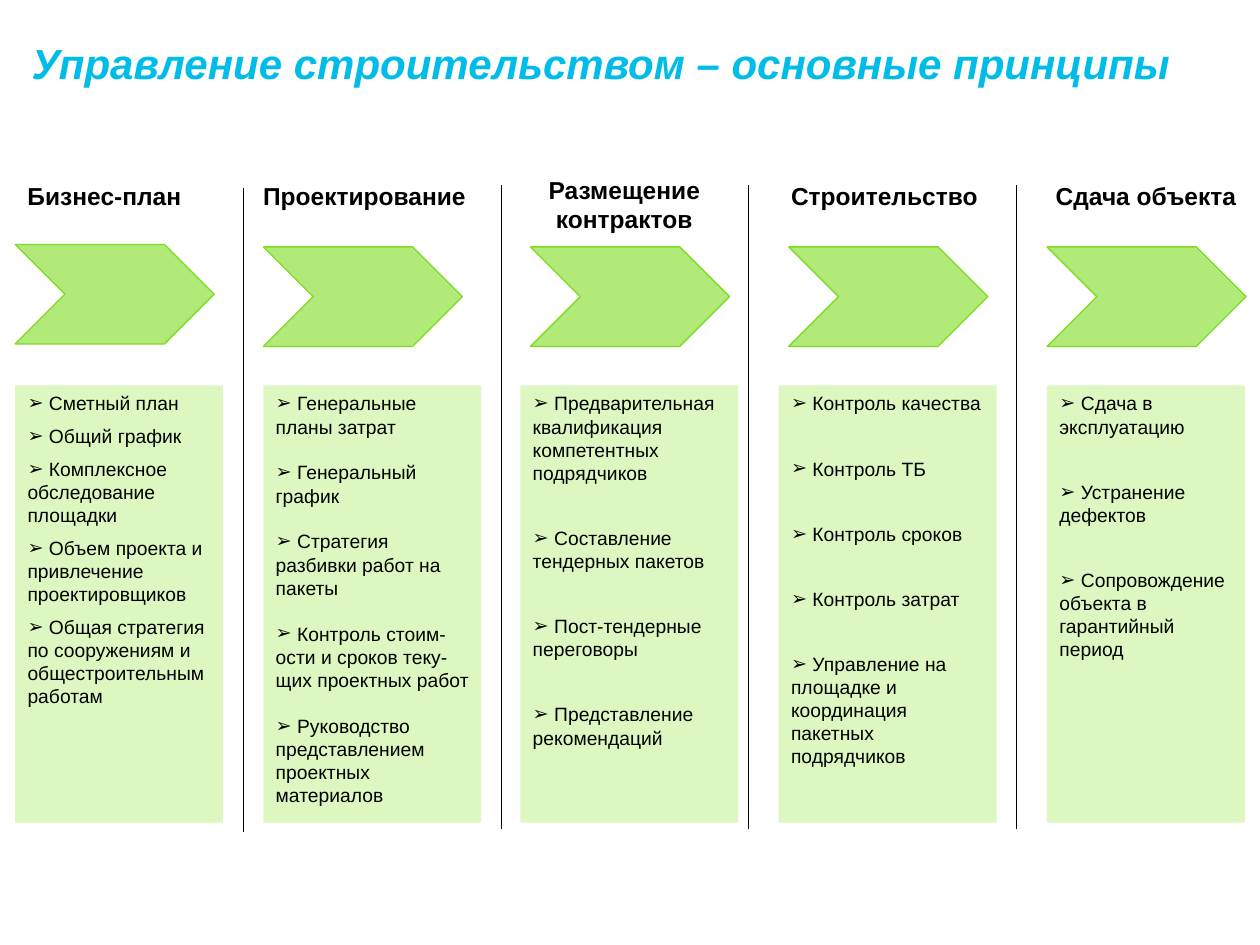
from lxml.etree import SubElement
from pptx import Presentation
from pptx.dml.color import RGBColor as Rgb
from pptx.enum.shapes import MSO_CONNECTOR as Link, MSO_SHAPE as Kind
from pptx.enum.text import MSO_ANCHOR as Anchor, PP_ALIGN as Align
from pptx.oxml.ns import qn
from pptx.util import Inches, Pt

HUES = {"title": "00BCE9", "ink": "000000", "arrow": "7DDC1E", "card": "CEF5A5"}

deck = Presentation()
deck.slide_width, deck.slide_height = Inches(10), Inches(7.5)
col, row = deck.slide_width / 100, deck.slide_height / 100
slide = deck.slides.add_slide(deck.slide_layouts[5])


def place(x, y, w, h):
    return int(x * col), int(y * row), int(w * col), int(h * row)


def paint(shape, hue, alpha):
    shape.shadow.inherit = False
    shape.fill.solid()
    shape.fill.fore_color.rgb = Rgb.from_string(HUES[hue])
    tint = shape._element.spPr.find(qn("a:solidFill"))[0]
    SubElement(tint, qn("a:alpha"), val=str(alpha * 1000))


title = slide.shapes.title
title.left, title.top, title.width, title.height = place(0, 4.8, 95.8, 11.07)
frame = title.text_frame
frame.text = "Управление строительством – основные принципы"
frame.word_wrap = True
frame.vertical_anchor = Anchor.TOP
frame.margin_left = Inches(0.25)
frame.margin_right = frame.margin_top = frame.margin_bottom = 0
par = frame.paragraphs[0]
par.alignment, par.line_spacing = Align.LEFT, 0.85
font = par.runs[0].font
font.name, font.size, font.bold, font.italic = "Arial", Pt(24), True, True
font.color.rgb = Rgb.from_string(HUES["title"])

heads = [
    ("Бизнес-план", 1.2, 18.45, 18, Align.LEFT),
    ("Проектирование", 19.9, 18.45, 19, Align.LEFT),
    ("Размещение контрактов", 39.7, 17.87, 19.7, Align.CENTER),
    ("Строительство", 61.8, 18.45, 18, Align.LEFT),
    ("Сдача объекта", 82.8, 18.45, 17.2, Align.LEFT),
]
for text, x, y, w, align in heads:
    frame = slide.shapes.add_textbox(*place(x, y, w, 7.6)).text_frame
    frame.word_wrap = True
    frame.text = text
    par = frame.paragraphs[0]
    par.alignment = align
    font = par.runs[0].font
    font.name, font.size, font.bold = "Arial", Pt(14), True
    font.color.rgb = Rgb.from_string(HUES["ink"])

for x, y in [(1.2, 25.87), (20.9, 26.13), (42.1, 26.13), (62.6, 26.13), (83.1, 26.13)]:
    arrow = slide.shapes.add_shape(Kind.CHEVRON, *place(x, y, 15.8, 10.53))
    paint(arrow, "arrow", 60)
    arrow.line.color.rgb = Rgb.from_string(HUES["arrow"])
    arrow.line.width = Pt(0.75)

for x, y in [(19.3, 19.87), (39.8, 19.6), (59.4, 19.6), (80.7, 19.6)]:
    left, top, _, drop = place(x, y, 0, 68.13)
    line = slide.shapes.add_connector(Link.STRAIGHT, left, top, left, top + drop)
    line.line.color.rgb = Rgb.from_string(HUES["ink"])
    line.line.width = Pt(0.75)
    SubElement(line._element.spPr, qn("a:effectLst"))

cards = [
    (1.2, 16.5, 5.5, [
        "Сметный план",
        "Общий график",
        "Комплексное обследование площадки",
        "Объем проекта и привлечение проектировщиков",
        "Общая стратегия по сооружениям и общестроительным работам",
    ]),
    (20.9, 17.3, 13, [
        "Генеральные планы затрат",
        "Генеральный график",
        "Стратегия разбивки работ на пакеты",
        "Контроль стоим-ости и сроков теку-щих проектных работ",
        "Руководство представлением проектных материалов",
    ]),
    (41.3, 17.3, 24, [
        "Предварительная квалификация компетентных подрядчиков",
        "Составление тендерных пакетов",
        "Пост-тендерные переговоры",
        "Представление рекомендаций",
    ]),
    (61.8, 17.3, 24, [
        "Контроль качества",
        "Контроль ТБ",
        "Контроль сроков",
        "Контроль затрат",
        "Управление на площадке и координация пакетных подрядчиков",
    ]),
    (83.1, 15.7, 24, [
        "Сдача в эксплуатацию",
        "Устранение дефектов",
        "Сопровождение объекта в гарантийный период",
    ]),
]
for x, w, gap, items in cards:
    card = slide.shapes.add_shape(Kind.RECTANGLE, *place(x, 40.8, w, 46.27))
    paint(card, "card", 70)
    card.line.fill.background()
    frame = card.text_frame
    frame.word_wrap = True
    frame.vertical_anchor = Anchor.TOP
    frame.margin_right = Inches(0.07)
    frame.text = "\n".join(f" {item}" for item in items)
    for i, par in enumerate(frame.paragraphs):
        par.alignment = Align.LEFT
        par.space_before = Pt(gap if i else 0)
        SubElement(par._p.get_or_add_pPr(), qn("a:buFont"), typeface="Arial")
        SubElement(par._p.pPr, qn("a:buChar"), char="➢")
        font = par.runs[0].font
        font.name, font.size = "Arial", Pt(11)
        font.color.rgb = Rgb.from_string(HUES["ink"])

deck.save("out.pptx")
